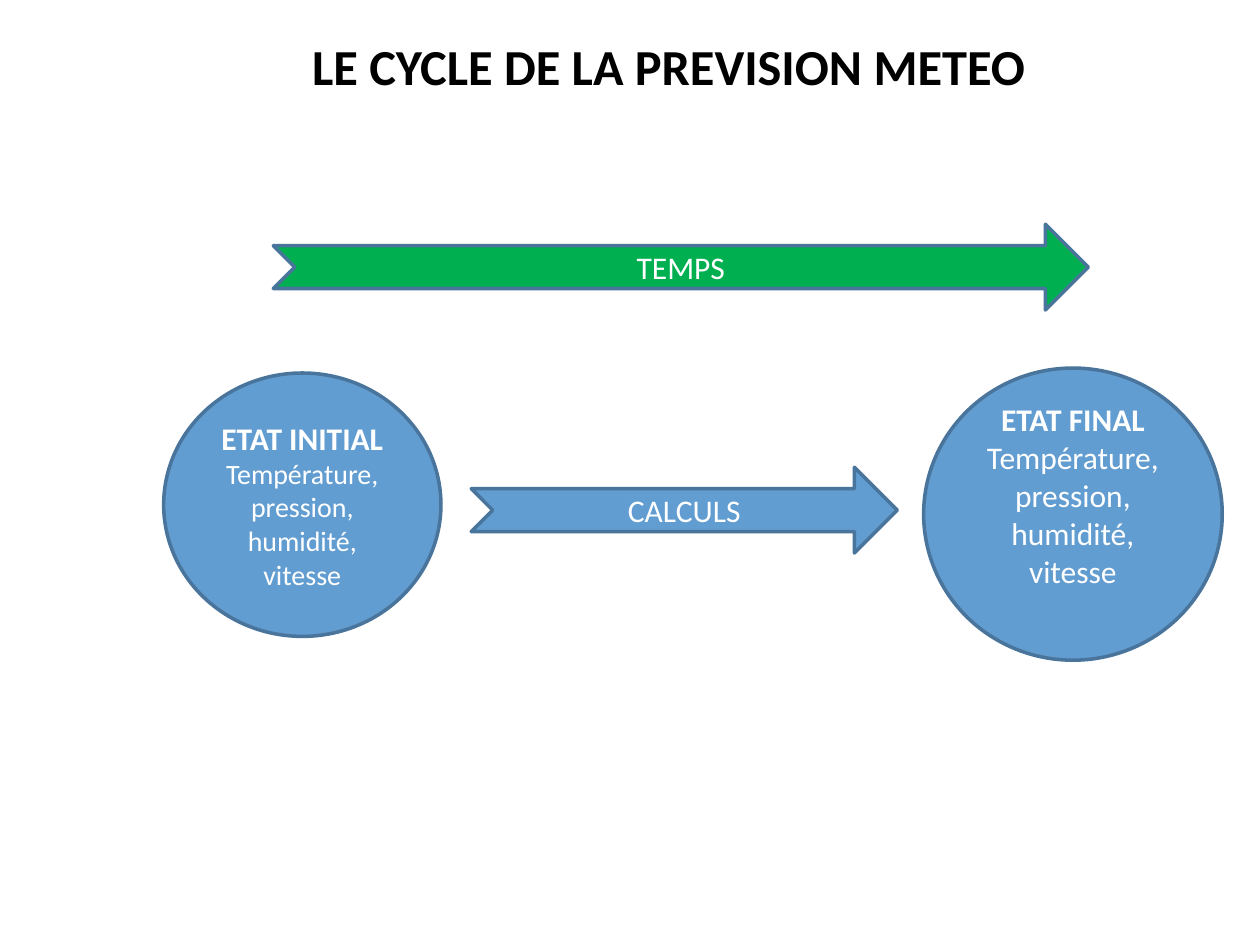
"""Build the weather forecast cycle slide."""
import pptx
import pptx.dml.color
import pptx.enum.shapes
import pptx.enum.text
import pptx.util

Cm = pptx.util.Cm
RGBColor = pptx.dml.color.RGBColor
SHAPES = pptx.enum.shapes.MSO_SHAPE

BLACK = RGBColor(0x00, 0x00, 0x00)
WHITE = RGBColor(0xFF, 0xFF, 0xFF)
BLUE = RGBColor(0x62, 0x9D, 0xD1)
DARK_BLUE = RGBColor(0x49, 0x74, 0x9B)
GREEN = RGBColor(0x00, 0xB0, 0x50)
FONT = "Calibri"
ARROW_HEIGHT = 1.73
VARIABLES = "Température, pression, humidité, vitesse"


def write_lines(shape, lines, color):
    frame = shape.text_frame
    frame.word_wrap = True
    frame.vertical_anchor = pptx.enum.text.MSO_ANCHOR.MIDDLE
    for index, (text, size, bold) in enumerate(lines):
        paragraph = frame.add_paragraph() if index else frame.paragraphs[0]
        paragraph.alignment = pptx.enum.text.PP_ALIGN.CENTER
        run = paragraph.add_run()
        run.text = text
        run.font.name = FONT
        run.font.size = pptx.util.Pt(size)
        run.font.bold = bold
        run.font.color.rgb = color


def add_title(slide, text):
    box = slide.shapes.add_textbox(Cm(2.69), Cm(0.69), Cm(21.59), Cm(1.24))
    frame = box.text_frame
    frame.margin_top = frame.margin_bottom = 0
    write_lines(box, [(text, 28.8, True)], BLACK)


def add_filled_shape(slide, kind, bounds, fill, lines):
    shape = slide.shapes.add_shape(kind, *(Cm(length) for length in bounds))
    shape.shadow.inherit = False
    shape.fill.solid()
    shape.fill.fore_color.rgb = fill
    shape.line.color.rgb = DARK_BLUE
    shape.line.width = pptx.util.Pt(2)
    write_lines(shape, lines, WHITE)
    return shape


def add_state(slide, bounds, name, detail_size):
    lines = [(name, 18, True), (VARIABLES, detail_size, False)]
    return add_filled_shape(slide, SHAPES.OVAL, bounds, BLUE, lines)


def add_arrow(slide, left, top, width, fill, label):
    bounds = (left, top, width, ARROW_HEIGHT)
    add_filled_shape(slide, SHAPES.NOTCHED_RIGHT_ARROW, bounds, fill, [(label, 18, False)])


def main():
    presentation = pptx.Presentation()
    presentation.slide_width = Cm(25.4)
    presentation.slide_height = Cm(19.05)
    slide = presentation.slides.add_slide(presentation.slide_layouts[6])
    add_title(slide, "LE CYCLE DE LA PREVISION METEO")
    add_state(slide, (3.3, 7.52, 5.59, 5.31), "ETAT INITIAL", 16)
    final_state = add_state(slide, (18.62, 7.42, 6.02, 5.89), "ETAT FINAL", 18)
    final_state.text_frame.margin_bottom = Cm(0.9)
    add_arrow(slide, 9.5, 9.42, 8.59, BLUE, "CALCULS")
    add_arrow(slide, 5.51, 4.52, 16.43, GREEN, "TEMPS")
    presentation.save("out.pptx")


if __name__ == "__main__":
    main()
